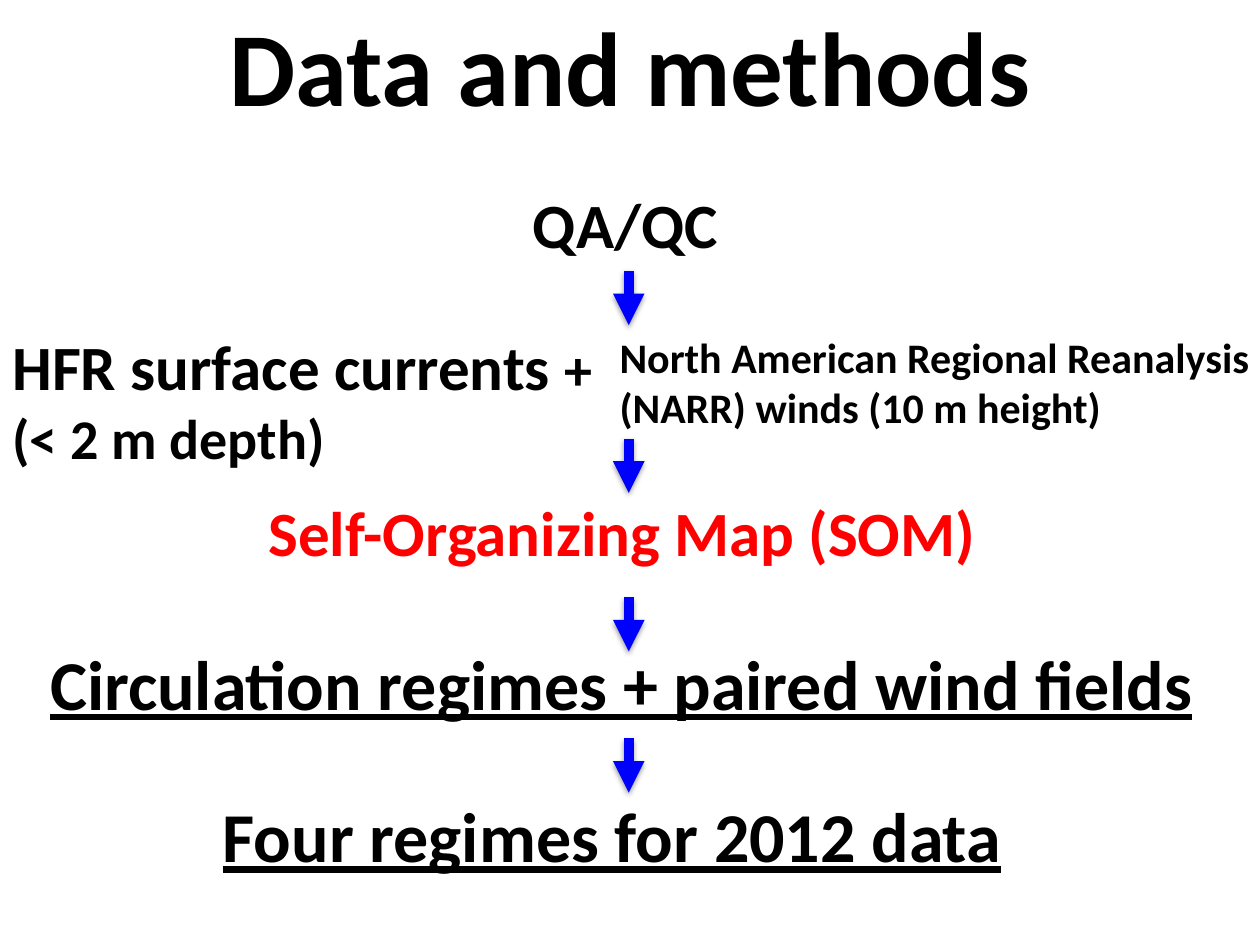
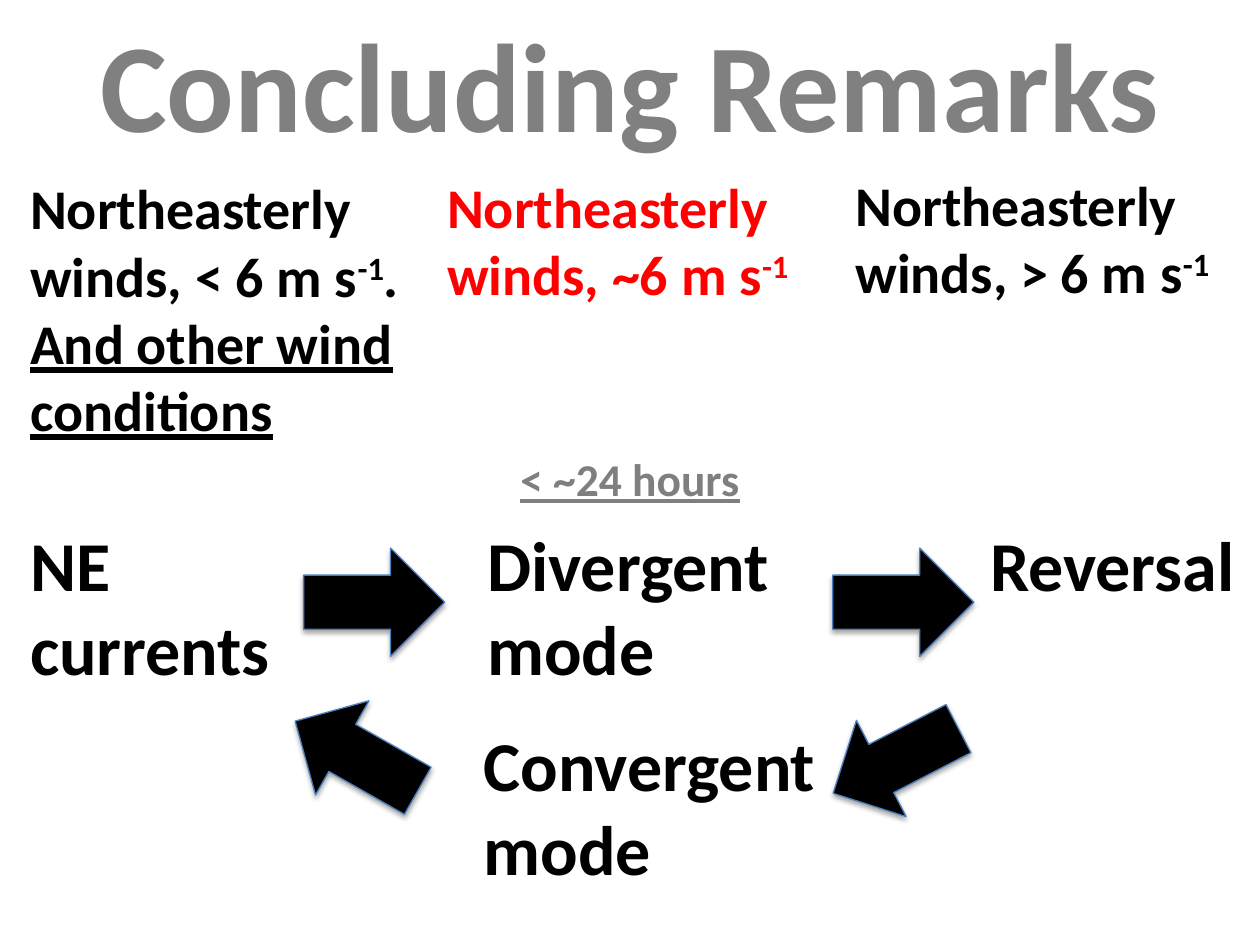
"""Build two slides: a data-and-methods flow and a closing cycle of wind regimes."""
from lxml import etree
from pptx import Presentation
from pptx.dml.color import RGBColor
from pptx.enum import shapes, text
from pptx.oxml import ns
from pptx.util import Pt

COLORS = {"black": "000000", "red": "FF0000", "blue": "0000FF", "title_gray": "808080",
          "note_gray": "7F7F7F", "edge": "4B7EBC"}
FONT = "Calibri"
BREAK = "\v"
SUPERSCRIPT = {"baseline": 30000}
UNDERLINE = {"underline": True}

METHOD_TITLE = ("Data and methods", (36, 4.3, 648, 65.5), 60, "black")
METHOD_TEXTS = [
    ((297.4, 102.2, 123.8, 51.1), 36, "black", [[("QA/QC", {})]]),
    ((0, 183.6, 359.3, 90), 36, "black",
     [[("HFR surface currents ", {}), ("+", {"size": Pt(32)}), (BREAK, {}),
       ("(< 2 m depth)", {"size": Pt(32)})]]),
    ((347, 185.8, 407.5, 65.5), 24, "black",
     [[("North American Regional Reanalysis (NARR) winds (10 m height)", {})]]),
    ((146.2, 278.6, 425.5, 51.1), 36, "red", [[("Self-Organizing Map (SOM)", {})]]),
    ((21.6, 362.2, 671.8, 55.4), 40, "black",
     [[("Circulation regimes + paired wind fields", UNDERLINE)]]),
    ((120.2, 449.3, 477.4, 55.4), 40, "black",
     [[("Four regimes for 2012 data", UNDERLINE)]]),
]
FLOW_X, FLOW_LENGTH = 359.3, 31
FLOW_TOPS = [154.8, 250.6, 341.3, 421.9]

REMARK_TITLE = ("Concluding Remarks", (36, 17.3, 648, 59), 72, "title_gray")
MODE_TOP, LEFT_COLUMN = 294.5, 10.1
REMARK_TEXTS = [
    ((LEFT_COLUMN, 95.8, 244.1, 162.7), 32, "black",
     [[("Northeasterly winds, < 6 m s", {}), ("-1", SUPERSCRIPT), (".", {})],
      [("And other wind conditions", UNDERLINE)]]),
    ((248.4, 95, 221.8, 85), 32, "red",
     [[("Northeasterly winds, ~6 m s", {}), ("-1", SUPERSCRIPT)]]),
    ((481.7, 93.6, 231.1, 85), 32, "black",
     [[("Northeasterly winds, > 6 m s", {}), ("-1", SUPERSCRIPT)]]),
    ((290.2, 254.2, 145.4, 38.9), 26, "note_gray", [[("< ~24 hours", UNDERLINE)]]),
    ((LEFT_COLUMN, MODE_TOP, 177.8, 104.4), 40, "black", [[("NE currents", {})]]),
    ((271.4, MODE_TOP, 177.8, 104.4), 40, "black", [[("Divergent mode", {})]]),
    ((558.7, MODE_TOP, 162, 55.4), 40, "black", [[("Reversal", {})]]),
    ((269.3, 409, 208.1, 104.4), 40, "black", [[("Convergent mode", {})]]),
]
CYCLE_SIZE = (80.6, 61.9)
CYCLE_ARROWS = [(173.5, 313.2, 0), (475.9, 313.2, 0), (471.6, 403.9, 152.7), (163.4, 401, 209.6)]


def rgb(name):
    return RGBColor.from_string(COLORS[name])


def points(values):
    return [Pt(value) for value in values]


def add_xml(parent, tag, **attributes):
    return etree.SubElement(parent, ns.qn(tag), attributes)


def style_span(span, size, color, changes):
    values = {"name": FONT, "size": Pt(size), "bold": True, **changes}
    baseline = values.pop("baseline", None)
    for name, value in values.items():
        setattr(span.font, name, value)
    span.font.color.rgb = rgb(color)
    if baseline:
        span.font._element.set("baseline", str(baseline))


def add_shadow(item, opacity, distance):
    effects = add_xml(item._element.spPr, "a:effectLst")
    shadow = add_xml(effects, "a:outerShdw", blurRad=str(Pt(3.1)), dist=str(Pt(distance)),
                     dir="5400000", rotWithShape="0")
    color = add_xml(shadow, "a:srgbClr", val=COLORS["black"])
    add_xml(color, "a:alpha", val=str(opacity * 1000))


def add_text(page, area, size, color, paragraphs):
    frame = page.shapes.add_textbox(*points(area)).text_frame
    frame.word_wrap = True
    frame.auto_size = text.MSO_AUTO_SIZE.SHAPE_TO_FIT_TEXT
    for index, spans in enumerate(paragraphs):
        para = frame.add_paragraph() if index else frame.paragraphs[0]
        for words, changes in spans:
            if words == BREAK:
                para.add_line_break()
                continue
            span = para.add_run()
            span.text = words
            style_span(span, size, color, changes)


def add_page(deck, title, texts):
    page = deck.slides.add_slide(deck.slide_layouts[5])
    words, area, size, color = title
    heading = page.shapes.title
    heading.left, heading.top, heading.width, heading.height = points(area)
    frame = heading.text_frame
    frame.auto_size = text.MSO_AUTO_SIZE.NONE
    frame.vertical_anchor = text.MSO_ANCHOR.MIDDLE
    para = frame.paragraphs[0]
    para.alignment = text.PP_ALIGN.CENTER
    span = para.add_run()
    span.text = words
    style_span(span, size, color, {})
    for entry in texts:
        add_text(page, *entry)
    return page


def add_flow_arrow(page, top):
    ends = points((FLOW_X, top, FLOW_X, top + FLOW_LENGTH))
    arrow = page.shapes.add_connector(shapes.MSO_CONNECTOR.STRAIGHT, *ends)
    arrow.line.color.rgb = rgb("blue")
    arrow.line.width = Pt(6)
    add_xml(arrow._element.spPr.find(ns.qn("a:ln")), "a:tailEnd", type="triangle")
    add_shadow(arrow, 38, 1.6)


def add_cycle_arrow(page, left, top, rotation):
    area = points((left, top, *CYCLE_SIZE))
    arrow = page.shapes.add_shape(shapes.MSO_SHAPE.RIGHT_ARROW, *area)
    arrow.rotation = rotation
    arrow.fill.solid()
    arrow.fill.fore_color.rgb = rgb("black")
    arrow.line.color.rgb = rgb("edge")
    arrow.line.width = Pt(0.75)
    add_shadow(arrow, 35, 1.8)


def main():
    deck = Presentation()
    deck.slide_width, deck.slide_height = points((720, 540))
    methods = add_page(deck, METHOD_TITLE, METHOD_TEXTS)
    for top in FLOW_TOPS:
        add_flow_arrow(methods, top)
    remarks = add_page(deck, REMARK_TITLE, REMARK_TEXTS)
    for arrow in CYCLE_ARROWS:
        add_cycle_arrow(remarks, *arrow)
    deck.save("out.pptx")


if __name__ == "__main__":
    main()
